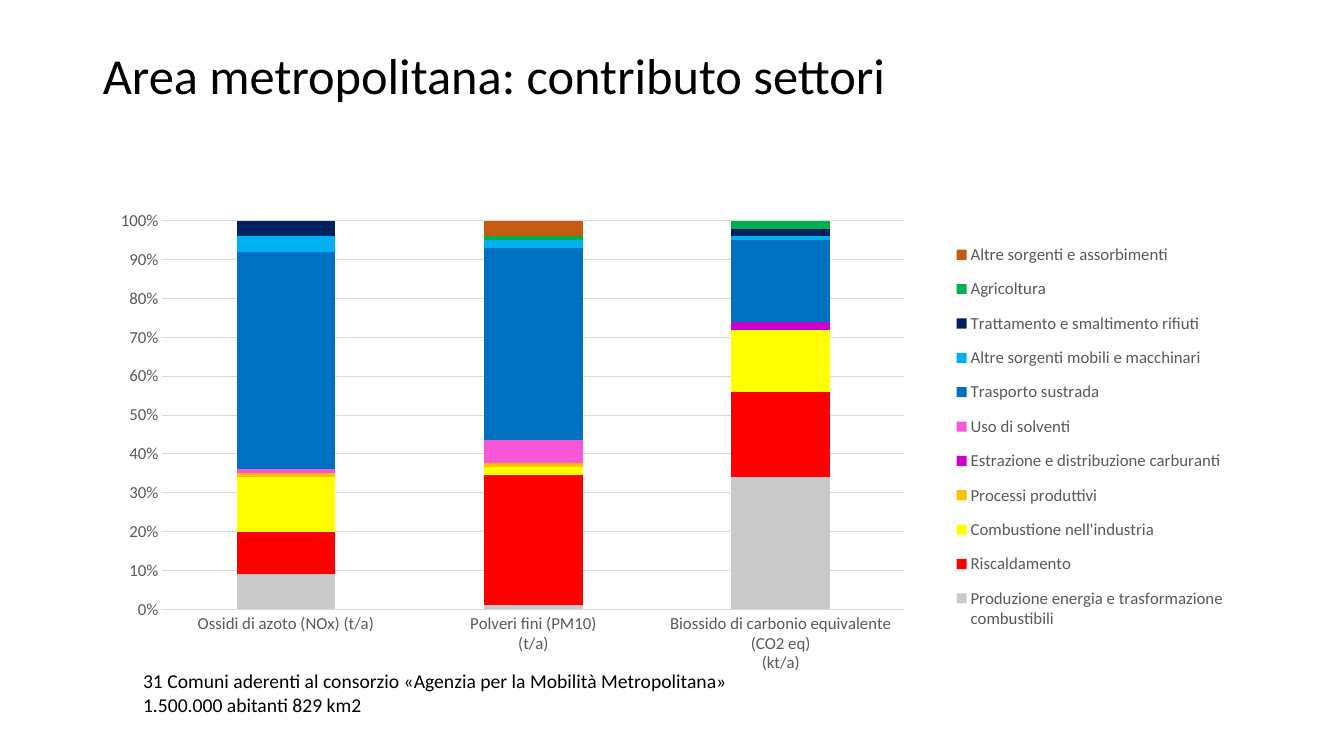
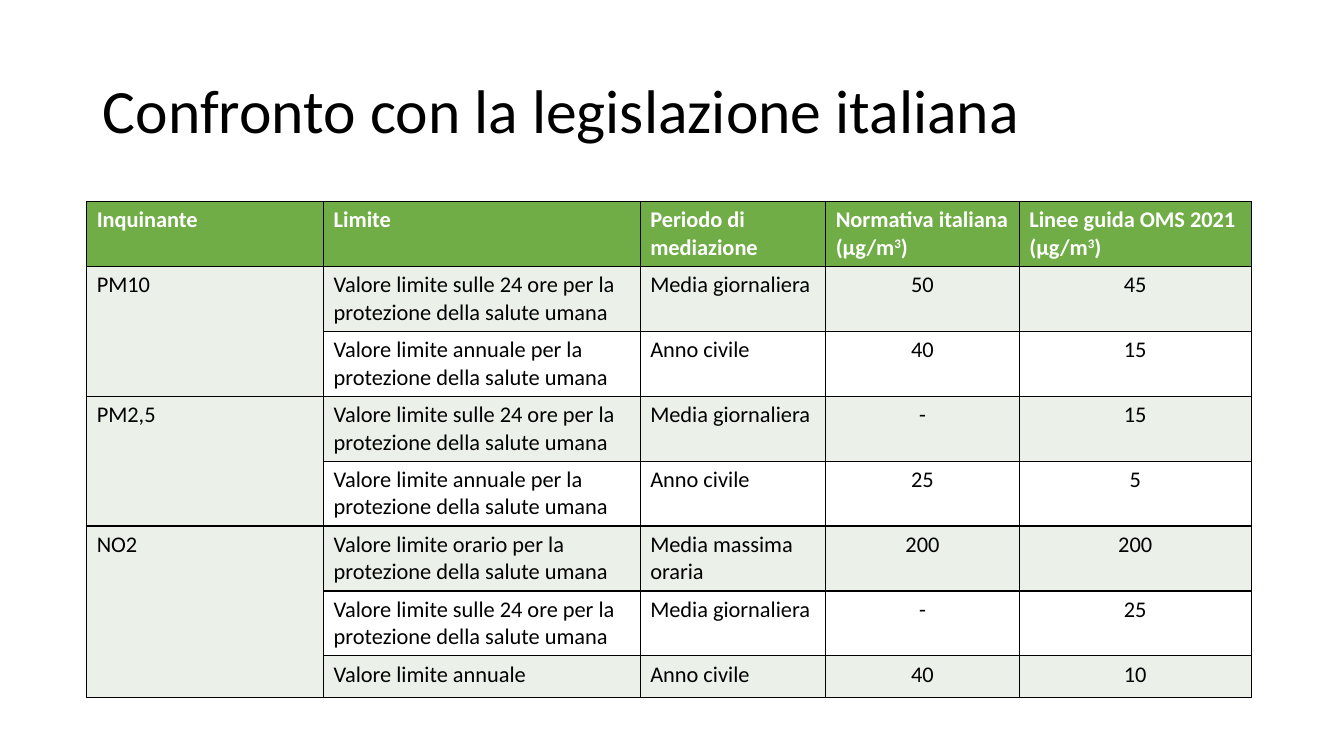
from lxml import etree
from pptx import Presentation
from pptx.chart.data import CategoryChartData
from pptx.dml.color import RGBColor
from pptx.enum.chart import XL_CHART_TYPE, XL_LEGEND_POSITION, XL_TICK_MARK
from pptx.enum.text import MSO_ANCHOR, MSO_AUTO_SIZE, PP_ALIGN
from pptx.oxml import parse_xml
from pptx.oxml.ns import nsdecls, qn
from pptx.util import Pt

STACKED = XL_CHART_TYPE.COLUMN_STACKED_100
LEGEND_RIGHT = XL_LEGEND_POSITION.RIGHT
NO_TICK = XL_TICK_MARK.NONE
MIDDLE = MSO_ANCHOR.MIDDLE
NO_FIT = MSO_AUTO_SIZE.NONE
LEFT, CENTER = PP_ALIGN.LEFT, PP_ALIGN.CENTER

EMU_PER_PX = 9144
TITLE_ONLY = 5

CATEGORIES = [
    "Ossidi di azoto (NOx) (t/a)",
    "Polveri fini (PM10)\n(t/a)",
    "Biossido di carbonio equivalente (CO2 eq)\n(kt/a)",
]
SECTORS = [
    ("Produzione energia e trasformazione combustibili", (9, 1, 34), "C9C9C9"),
    ("Riscaldamento", (11, 34, 22), "FF0000"),
    ("Combustione nell'industria", (14, 2, 16), "FFFF00"),
    ("Processi produttivi", (1, 1, 0), "FFC000"),
    ("Estrazione e distribuzione carburanti", (0, 0, 2), "CC00CC"),
    ("Uso di solventi", (1, 6, 0), "F856D9"),
    ("Trasporto sustrada", (56, 50, 21), "0070C0"),
    ("Altre sorgenti mobili e macchinari", (4, 2, 1), "00B0F0"),
    ("Trattamento e smaltimento rifiuti", (4, 0, 2), "002060"),
    ("Agricoltura", (0, 1, 2), "00B050"),
    ("Altre sorgenti e assorbimenti", (0, 4, 0), "C55A11"),
]

DAILY = "Valore limite sulle 24 ore per la protezione della salute umana"
YEARLY = "Valore limite annuale per la protezione della salute umana"
HOURLY = "Valore limite orario per la protezione della salute umana"
LIMITS = [
    ("Inquinante", "Limite", "Periodo di mediazione",
     "Normativa italiana\n(µg/m^3^)", "Linee guida OMS 2021 (µg/m^3^)"),
    ("PM10", DAILY, "Media giornaliera", "50", "45"),
    ("", YEARLY, "Anno civile", "40", "15"),
    ("PM2,5", DAILY, "Media giornaliera", "-", "15"),
    ("", YEARLY, "Anno civile", "25", "5"),
    ("NO2", HOURLY, "Media massima oraria", "200", "200"),
    ("", DAILY, "Media giornaliera", "-", "25"),
    ("", "Valore limite annuale", "Anno civile", "40", "10"),
]
MERGED_ROWS = [(1, 2), (3, 4), (5, 7)]


def px(length):
    return length * EMU_PER_PX


def color(code):
    return RGBColor.from_string(code)


def place_inside_chart(parent, index, x, y, w, h, inner=False):
    for old in parent.findall(qn("c:layout")):
        parent.remove(old)
    layout = parse_xml(f"<c:layout {nsdecls('c')}><c:manualLayout/></c:layout>")
    settings = [("layoutTarget", "inner")] if inner else []
    settings += [("xMode", "edge"), ("yMode", "edge"),
                 ("x", x), ("y", y), ("w", w), ("h", h)]
    for name, value in settings:
        etree.SubElement(layout[0], qn(f"c:{name}")).set("val", str(value))
    parent.insert(index, layout)


class Deck:
    FONT = "Calibri"
    INK, WHITE = "000000", "FFFFFF"
    AXIS_TEXT, GRID = "595959", "D9D9D9"
    HEADER, BAND = "70AD47", "EBF1E9"

    def __init__(self):
        self.deck = Presentation()
        self.deck.slide_width = px(1333)
        self.deck.slide_height = px(750)
        self.page = None

    def style(self, font, size, code, bold=False):
        font.name = self.FONT
        font.size = Pt(size)
        font.bold = bold
        font.color.rgb = color(code)

    def add_page(self, title, size, height):
        self.page = self.deck.slides.add_slide(self.deck.slide_layouts[TITLE_ONLY])
        box = self.page.shapes.title
        box.left, box.top, box.width, box.height = map(px, (92, 40, 1150, height))
        frame = box.text_frame
        frame.text = title
        frame.auto_size = NO_FIT
        frame.word_wrap = True
        frame.vertical_anchor = MIDDLE
        para = frame.paragraphs[0]
        para.alignment = LEFT
        para.line_spacing = 0.9
        self.style(para.runs[0].font, size, self.INK)

    def add_text(self, text, size, *place):
        frame = self.page.shapes.add_textbox(*map(px, place)).text_frame
        frame.word_wrap = True
        frame.text = text
        for para in frame.paragraphs:
            self.style(para.runs[0].font, size, self.INK)

    def add_sector_chart(self, categories, sectors, *place):
        data = CategoryChartData()
        data.categories = categories
        for name, values, _ in sectors:
            data.add_series(name, values)
        chart = self.page.shapes.add_chart(STACKED, *map(px, place), data).chart
        self.style(chart.font, 12, self.AXIS_TEXT)
        chart.has_title = False
        plot = chart.plots[0]
        plot.gap_width = 150
        plot.overlap = 100
        plot.vary_by_categories = False
        for series, (_, _, code) in zip(plot.series, sectors):
            series.format.fill.solid()
            series.format.fill.fore_color.rgb = color(code)
        values, names = chart.value_axis, chart.category_axis
        for axis in (values, names):
            axis.major_tick_mark = axis.minor_tick_mark = NO_TICK
            self.style(axis.tick_labels.font, 12, self.AXIS_TEXT)
        values.tick_labels.number_format = "0%"
        values.tick_labels.number_format_is_linked = False
        values.format.line.fill.background()
        for lines in (values.major_gridlines, names):
            lines.format.line.color.rgb = color(self.GRID)
            lines.format.line.width = Pt(0.75)
        chart.has_legend = True
        legend = chart.legend
        legend.position = LEGEND_RIGHT
        legend.include_in_layout = False
        self.style(legend.font, 12, self.AXIS_TEXT)
        plot_area = chart._chartSpace.chart.plotArea
        place_inside_chart(plot_area, 0, 0.06, 0.04, 0.64, 0.81, inner=True)
        place_inside_chart(legend._element, 1, 0.73, 0.06, 0.26, 0.86)

    def fill_cell(self, cell, text, code, ink, bold, alignment):
        cell.text = text
        for para in cell.text_frame.paragraphs:
            pieces = para.text.split("^")
            para.clear()
            para.alignment = alignment
            for index, piece in enumerate(pieces):
                span = para.add_run()
                span.text = piece
                self.style(span.font, 16, ink, bold)
                if index % 2:
                    span._r.get_or_add_rPr().set("baseline", "30000")
        cell.fill.solid()
        cell.fill.fore_color.rgb = color(code)
        properties = cell._tc.get_or_add_tcPr()
        for index, side in enumerate("LRTB"):
            properties.insert(index, parse_xml(
                f'<a:ln{side} {nsdecls("a")} w="12700"><a:solidFill>'
                f'<a:srgbClr val="{self.INK}"/></a:solidFill></a:ln{side}>'))

    def add_limit_table(self, rows, merged_rows, left, top, widths, heights):
        place = map(px, (left, top, sum(widths), sum(heights)))
        table = self.page.shapes.add_table(len(rows), len(widths), *place).table
        for column, width in zip(table.columns, widths):
            column.width = px(width)
        for row, height in zip(table.rows, heights):
            row.height = px(height)
        for r, texts in enumerate(rows):
            for c, text in enumerate(texts):
                header = r == 0
                banded = c == 0 or r % 2
                code = self.HEADER if header else self.BAND if banded else self.WHITE
                ink = self.WHITE if header else self.INK
                alignment = CENTER if r and c > 2 else LEFT
                self.fill_cell(table.cell(r, c), text, code, ink, header, alignment)
        for first, last in merged_rows:
            table.cell(first, 0).merge(table.cell(last, 0))


def main():
    slides = Deck()
    slides.add_page("Area metropolitana: contributo settori", 36, 76)
    slides.add_sector_chart(CATEGORIES, SECTORS, 92, 200, 1150, 476)
    slides.add_text("31 Comuni aderenti al consorzio «Agenzia per la Mobilità Metropolitana»\n"
                    "1.500.000 abitanti 829 km2", 14, 132, 659, 989, 81)

    slides.add_page("Confronto con la legislazione italiana", 44, 145)
    slides.add_limit_table(LIMITS, MERGED_ROWS, 86, 200,
                           [235, 314, 184, 192, 230], [64] * 7 + [41])
    slides.deck.save("out.pptx")


if __name__ == "__main__":
    main()
